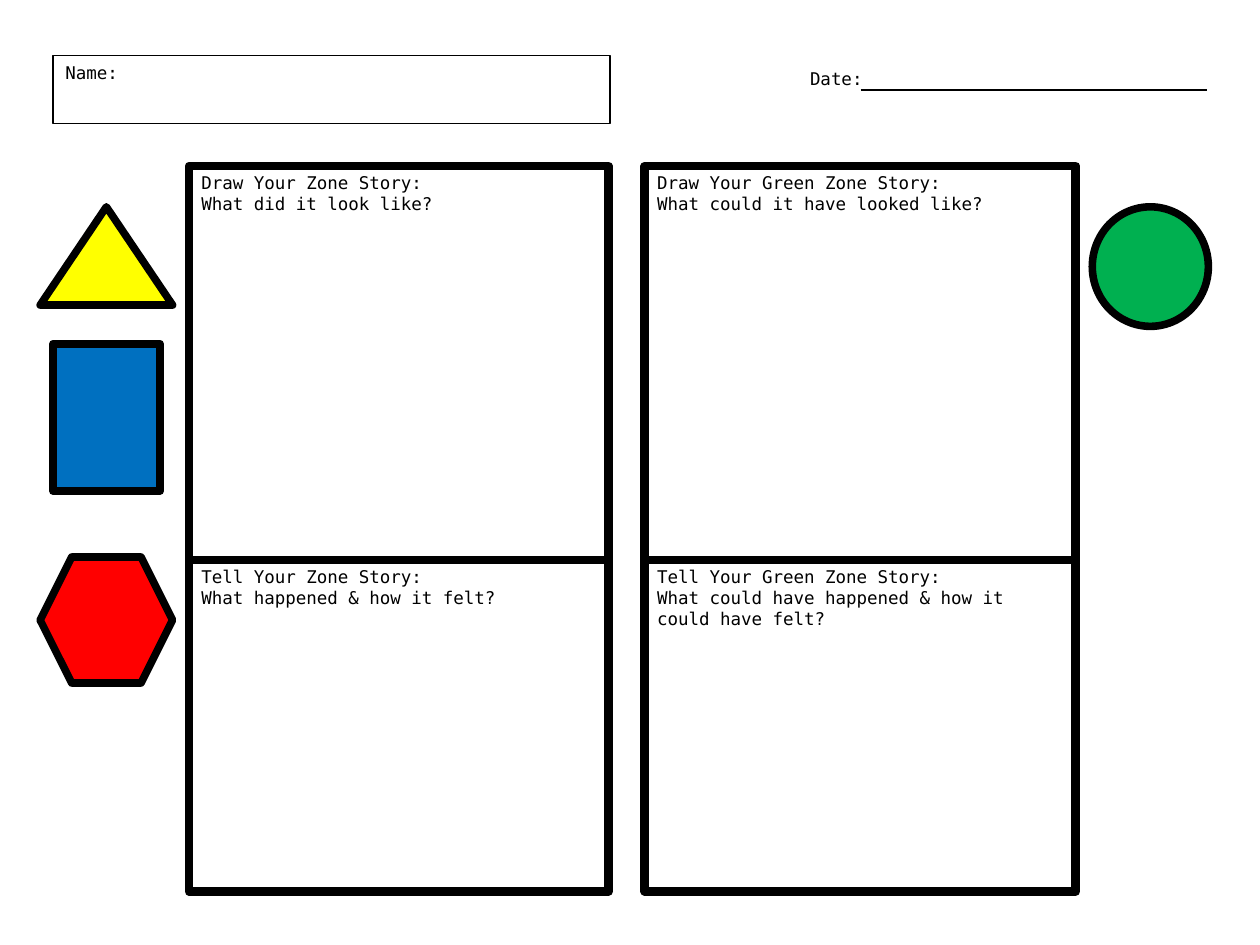
import pptx
import pptx.dml.color
import pptx.enum.shapes
import pptx.enum.text
import pptx.oxml.ns
import pptx.util
from pptx.util import Cm
import lxml.etree

SHAPES = pptx.enum.shapes.MSO_SHAPE
BLACK = "000000"


def color(hex_value):
    return pptx.dml.color.RGBColor.from_string(hex_value)


def write(box, text, font="DejaVu Sans Mono", size=10, ink=BLACK):
    frame = box.text_frame
    frame.word_wrap = True
    frame.vertical_anchor = pptx.enum.text.MSO_ANCHOR.TOP
    frame.text = text
    for paragraph in frame.paragraphs:
        paragraph.alignment = pptx.enum.text.PP_ALIGN.LEFT
        paragraph.font.name = font
        paragraph.font.size = pptx.util.Pt(size)
        paragraph.font.color.rgb = color(ink)


deck = pptx.Presentation()
deck.slide_width = Cm(25.4)
deck.slide_height = Cm(19.05)
slide = deck.slides.add_slide(deck.slide_layouts[6])

# Name box
name = slide.shapes.add_shape(SHAPES.RECTANGLE, Cm(1.07), Cm(1.12), Cm(11.23), Cm(1.37))
name.shadow.inherit = False
name.fill.background()
name.line.color.rgb = color(BLACK)
name.line.width = pptx.util.Pt(0.75)
write(name, "Name:")

# Date label and its writing line
date = slide.shapes.add_textbox(Cm(16.08), Cm(1.24), Cm(6.98), Cm(1.12))
write(date, "Date:")
date_line = slide.shapes.add_connector(
    pptx.enum.shapes.MSO_CONNECTOR.STRAIGHT, Cm(17.35), Cm(1.82), Cm(24.33), Cm(1.82))
date_line.line.color.rgb = color(BLACK)
date_line.line.width = pptx.util.Pt(1)
lxml.etree.SubElement(date_line._element.spPr, pptx.oxml.ns.qn("a:effectLst"))

# Story panels: what happened on the left, the green zone on the right
columns = [
    (3.81, 8.46, "Draw Your Zone Story:\nWhat did it look like?",
     "Tell Your Zone Story:\nWhat happened & how it felt?"),
    (13.0, 8.69, "Draw Your Green Zone Story:\nWhat could it have looked like?",
     "Tell Your Green Zone Story:\nWhat could have happened & how it could have felt?"),
]
draw_top, draw_height, tell_height = 3.35, 7.94, 6.68
outlined = []
for left, width, draw_prompt, tell_prompt in columns:
    for top, height, prompt in [(draw_top, draw_height, draw_prompt),
                                (draw_top + draw_height, tell_height, tell_prompt)]:
        panel = slide.shapes.add_shape(
            SHAPES.RECTANGLE, Cm(left), Cm(top), Cm(width), Cm(height))
        panel.fill.background()
        write(panel, prompt)
        outlined.append((panel, 5))

# Zone symbols
zones = [
    (SHAPES.FLOWCHART_CONNECTOR, "00B050", 22.02, 4.17, 2.34, 2.41),
    (SHAPES.ISOSCELES_TRIANGLE, "FFFF00", 0.81, 4.17, 2.67, 1.98),
    (SHAPES.RECTANGLE, "0070C0", 1.07, 6.93, 2.16, 2.97),
    (SHAPES.HEXAGON, "FF0000", 0.81, 11.23, 2.67, 2.54),
]
for outline, fill, left, top, width, height in zones:
    zone = slide.shapes.add_shape(outline, Cm(left), Cm(top), Cm(width), Cm(height))
    zone.fill.solid()
    zone.fill.fore_color.rgb = color(fill)
    outlined.append((zone, 4.33))

# Heavy black outlines with rounded corners
for shape, weight in outlined:
    shape.shadow.inherit = False
    shape.line.color.rgb = color(BLACK)
    shape.line.width = pptx.util.Pt(weight)
    lxml.etree.SubElement(shape.line._get_or_add_ln(), pptx.oxml.ns.qn("a:round"))

deck.save("out.pptx")
